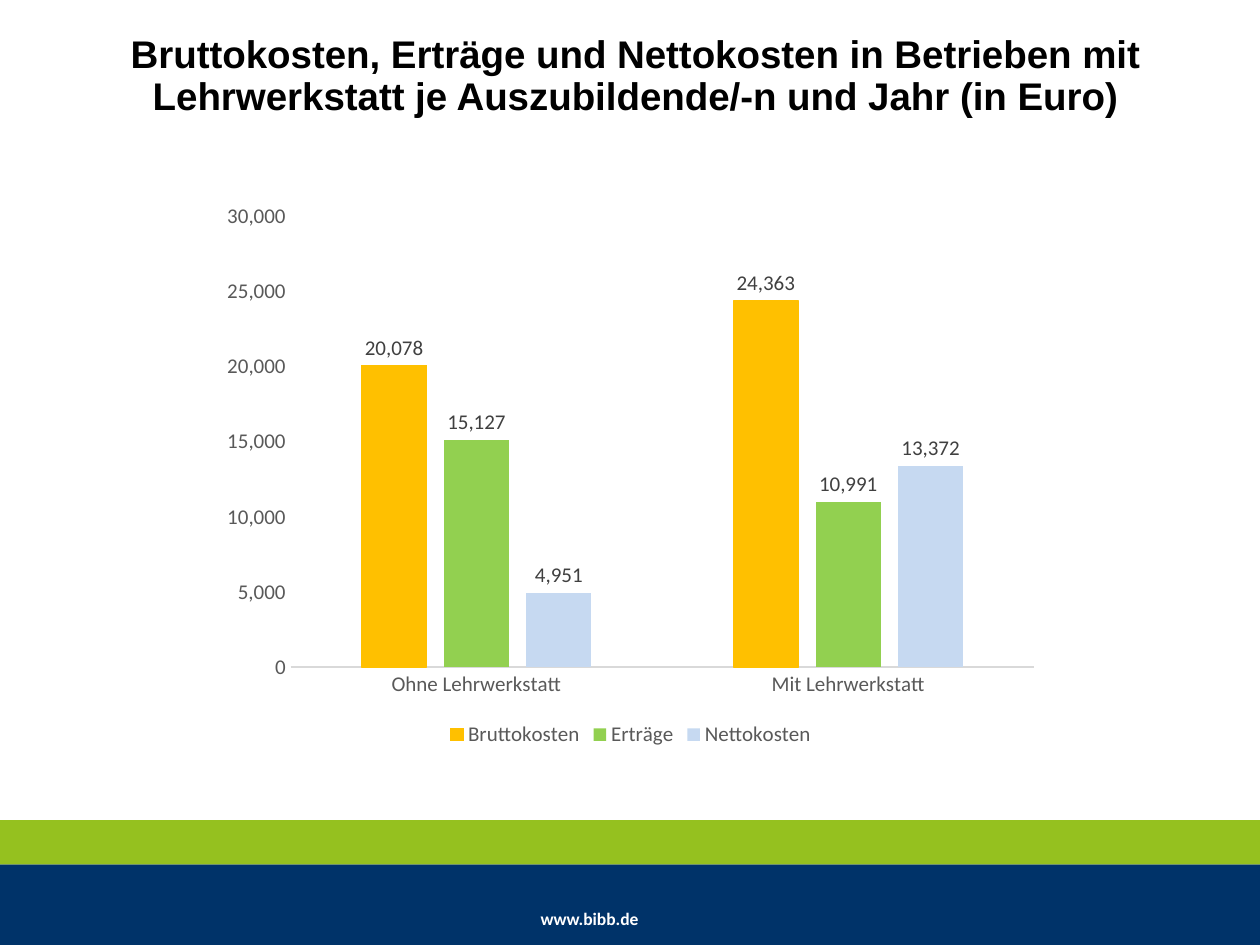
from pptx import Presentation
from pptx.chart.data import CategoryChartData as Data
from pptx.dml.color import RGBColor as Color
from pptx.enum.chart import XL_CHART_TYPE as Kind, XL_LABEL_POSITION as Spot
from pptx.enum.chart import XL_LEGEND_POSITION as Side, XL_TICK_MARK as Tick
from pptx.enum.shapes import MSO_SHAPE as Shape
from pptx.enum.text import MSO_ANCHOR as Anchor, PP_ALIGN as Align
from pptx.util import Inches, Pt


def paint(fmt, tint):
    """Set a solid colour on a fill."""
    fmt.solid()
    fmt.fore_color.rgb = Color.from_string(tint)


def style(font, size, tint, name="Calibri", bold=False):
    """Set the look of a font."""
    font.size, font.name, font.bold = Pt(size), name, bold
    font.color.rgb = Color.from_string(tint)


class Page:
    """Hold the style and the current slide."""

    head, grey, dark, rule = "000000", "595959", "404040", "D9D9D9"
    text, small = 12, 10

    def __init__(self, deck):
        """Add a slide that has only a title."""
        self.slide = deck.slides.add_slide(deck.slide_layouts[5])
        self.shapes = self.slide.shapes

    def band(self, top, high, tint):
        """Draw a band across the slide."""
        bar = self.shapes.add_shape(
            Shape.RECTANGLE, 0, Inches(top), Inches(10), Inches(high))
        bar.shadow.inherit = False
        paint(bar.fill, tint)
        bar.line.fill.background()

    def note(self, box, text):
        """Write a short line in the footer."""
        frame = self.shapes.add_textbox(*map(Inches, box)).text_frame
        frame.word_wrap = True
        frame.margin_left = frame.margin_right = 0
        frame.margin_top = frame.margin_bottom = 0
        frame.text = text
        style(frame.paragraphs[0].runs[0].font, self.small, "FFFFFF", bold=True)

    def title(self, box, text):
        """Fill and place the title."""
        shape = self.shapes.title
        shape.left, shape.top, shape.width, shape.height = map(Inches, box)
        frame = shape.text_frame
        frame.text = text
        frame.word_wrap = True
        frame.vertical_anchor = Anchor.TOP
        para = frame.paragraphs[0]
        para.alignment, para.line_spacing = Align.CENTER, 0.9
        para.space_before = Pt(0)
        style(para.runs[0].font, 22, self.head, "Arial", True)

    def chart(self, box, cats, rows):
        """Draw a column chart from named, coloured rows."""
        data = Data(number_format="#,##0")
        data.categories = cats
        for name, tint, vals in rows:
            data.add_series(name, vals)
        chart = self.shapes.add_chart(
            Kind.COLUMN_CLUSTERED, *map(Inches, box), data).chart
        style(chart.font, self.small, self.head)
        chart.has_title = False
        chart.has_legend = True
        chart.legend.position = Side.BOTTOM
        chart.legend.include_in_layout = False
        style(chart.legend.font, self.text, self.grey)
        self.axes(chart)
        plot = chart.plots[0]
        plot.gap_width, plot.overlap = 219, -27
        plot.vary_by_categories = False
        for row, (name, tint, vals) in zip(plot.series, rows):
            paint(row.format.fill, tint)
            row.invert_if_negative = False
            tags = row.data_labels
            tags.show_value, tags.position = True, Spot.OUTSIDE_END
            tags.number_format, tags.number_format_is_linked = "#,##0", False
            style(tags.font, self.text, self.dark)
        edge = plot.series[0].format.line
        edge.width = Pt(0.75)
        paint(edge.fill, rows[0][1])

    def axes(self, chart):
        """Format both axes of a chart."""
        cat, val = chart.category_axis, chart.value_axis
        for axis in (cat, val):
            axis.major_tick_mark = axis.minor_tick_mark = Tick.NONE
            axis.has_major_gridlines = False
            style(axis.tick_labels.font, self.text, self.grey)
        cat.format.line.width = Pt(0.75)
        paint(cat.format.line.fill, self.rule)
        val.format.line.fill.background()
        val.minimum_scale, val.maximum_scale, val.major_unit = 0, 30000, 5000
        val.tick_labels.number_format = "#,##0"
        val.tick_labels.number_format_is_linked = False


def main():
    """Build and save the slide."""
    deck = Presentation()
    deck.slide_width, deck.slide_height = Inches(10), Inches(7.5)
    page = Page(deck)
    page.band(6.86, 0.64, "003369")
    page.band(6.51, 0.35, "95C11F")
    page.note((4.29, 7.21, 1.02, 0.17), "www.bibb.de")
    page.title(
        (0.52, 0.23, 9.05, 0.77),
        "Bruttokosten, Erträge und Nettokosten in Betrieben mit "
        "Lehrwerkstatt je Auszubildende/-n und Jahr (in Euro)")
    page.chart(
        (1.67, 1.53, 6.67, 4.44),
        ("Ohne Lehrwerkstatt", "Mit Lehrwerkstatt"),
        (("Bruttokosten", "FFC000", (20078, 24363)),
         ("Erträge", "92D050", (15127, 10991)),
         ("Nettokosten", "C6D9F1", (4951, 13372))))
    deck.save("out.pptx")


if __name__ == "__main__":
    main()
